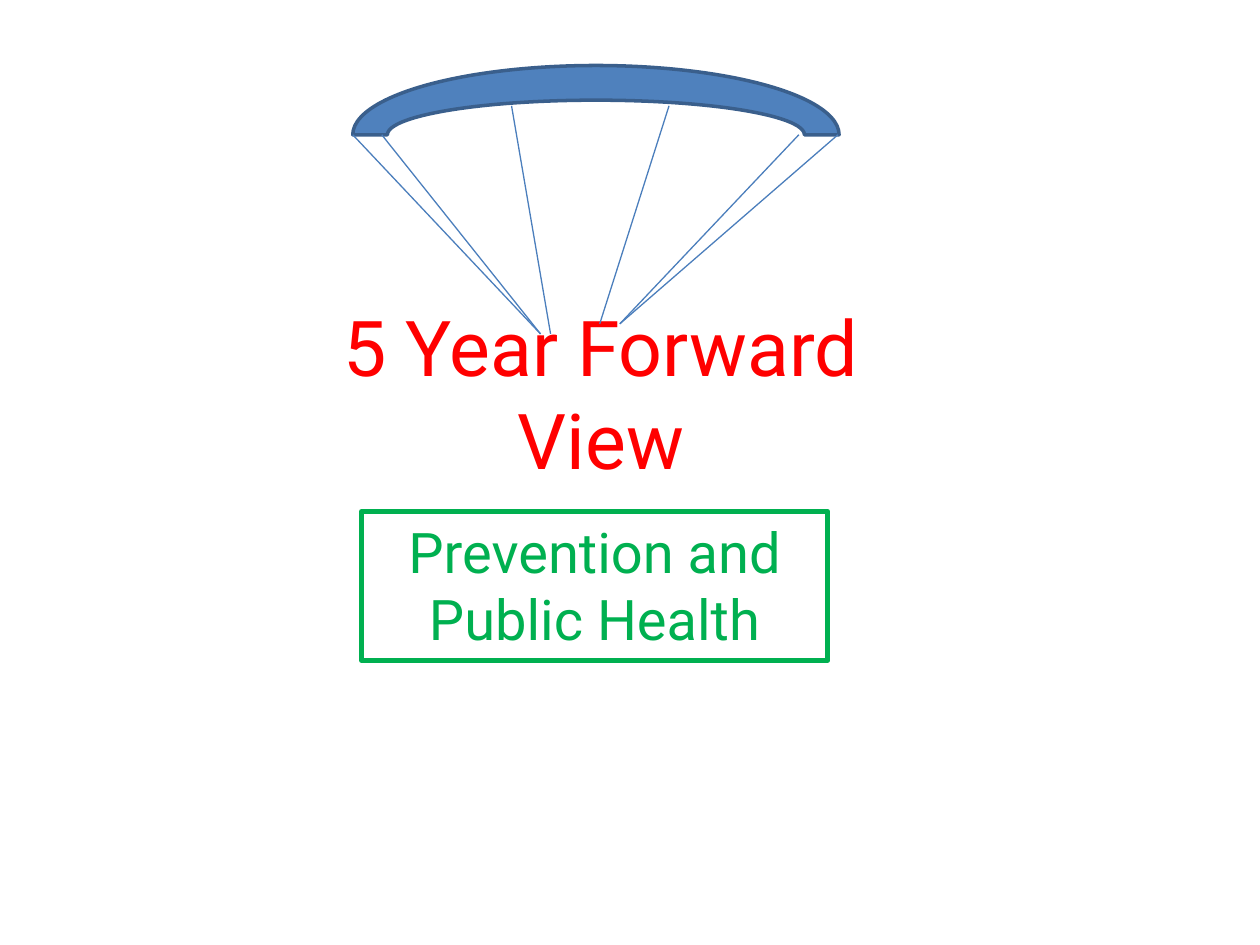
from lxml import etree
from pptx import Presentation
from pptx.dml.color import RGBColor
from pptx.enum.shapes import MSO_CONNECTOR, MSO_SHAPE
from pptx.enum.text import MSO_AUTO_SIZE, PP_ALIGN
from pptx.oxml.ns import qn
from pptx.util import Emu, Inches, Pt

BLOCK_ARC = MSO_SHAPE.BLOCK_ARC
STRAIGHT = MSO_CONNECTOR.STRAIGHT
CENTER = PP_ALIGN.CENTER
GROW = MSO_AUTO_SIZE.SHAPE_TO_FIT_TEXT
RED, GREEN = "FF0000", "00B050"
CANOPY_FILL, CANOPY_EDGE, CORD_COLOR = "4F81BD", "3A5F8C", "4B7EBC"

presentation = Presentation()
presentation.slide_width = Inches(10)
presentation.slide_height = Inches(7.5)
slide = presentation.slides.add_slide(presentation.slide_layouts[6])

# Grid of 100 columns by 75 rows
COLUMN = presentation.slide_width / 100
ROW = presentation.slide_height / 75


def color(hex_string):
    return RGBColor.from_string(hex_string)


def add_text(text, *, left, top, width, height, size, fill, font="Roboto"):
    box = slide.shapes.add_textbox(Emu(left * COLUMN), Emu(top * ROW),
                                   Emu(width * COLUMN), Emu(height * ROW))
    box.text_frame.word_wrap = True
    box.text_frame.auto_size = GROW
    paragraph = box.text_frame.paragraphs[0]
    paragraph.alignment = CENTER
    run = paragraph.add_run()
    run.text = text
    run.font.size = Pt(size)
    run.font.name = font
    run.font.color.rgb = color(fill)
    return box


# Title
add_text("5 Year Forward View", left=21.7, top=23.3, width=52, height=15.8,
         size=44, fill=RED)

# Parachute canopy
parachute = slide.shapes.add_group_shape()
canopy = parachute.shapes.add_shape(BLOCK_ARC, Emu(28 * COLUMN), Emu(5.2 * ROW),
                                    Emu(38.6 * COLUMN), Emu(11 * ROW))
canopy.shadow.inherit = False
canopy.fill.solid()
canopy.fill.fore_color.rgb = color(CANOPY_FILL)
canopy.line.color.rgb = color(CANOPY_EDGE)
canopy.line.width = Pt(2)

# Cords from the canopy down to the title: top column and row, bottom column
RIM, UNDERSIDE = 10.7, 8.4
LEFT_END, RIGHT_END = 26.5, 25.7
cords = [
    (28, RIM, 42.9, LEFT_END),
    (66.5, RIM, 49.2, RIGHT_END),
    (30.3, RIM, 42.9, LEFT_END),
    (63.4, RIM, 49.2, RIGHT_END),
    (40.6, UNDERSIDE, 43.7, LEFT_END),
    (53.1, UNDERSIDE, 47.6, RIGHT_END),
]
for top_column, top_row, bottom_column, bottom_row in cords:
    cord = parachute.shapes.add_connector(
        STRAIGHT, Emu(top_column * COLUMN), Emu(top_row * ROW),
        Emu(bottom_column * COLUMN), Emu(bottom_row * ROW))
    cord.line.color.rgb = color(CORD_COLOR)
    cord.line.width = Pt(0.75)
    etree.SubElement(cord._element.spPr, qn("a:effectLst"))

# Framed payload
payload = add_text("Prevention and Public Health", left=28.7, top=40.6,
                   width=37, height=11.8, size=32, fill=GREEN)
payload.line.color.rgb = color(GREEN)
payload.line.width = Pt(3)

presentation.save("out.pptx")
